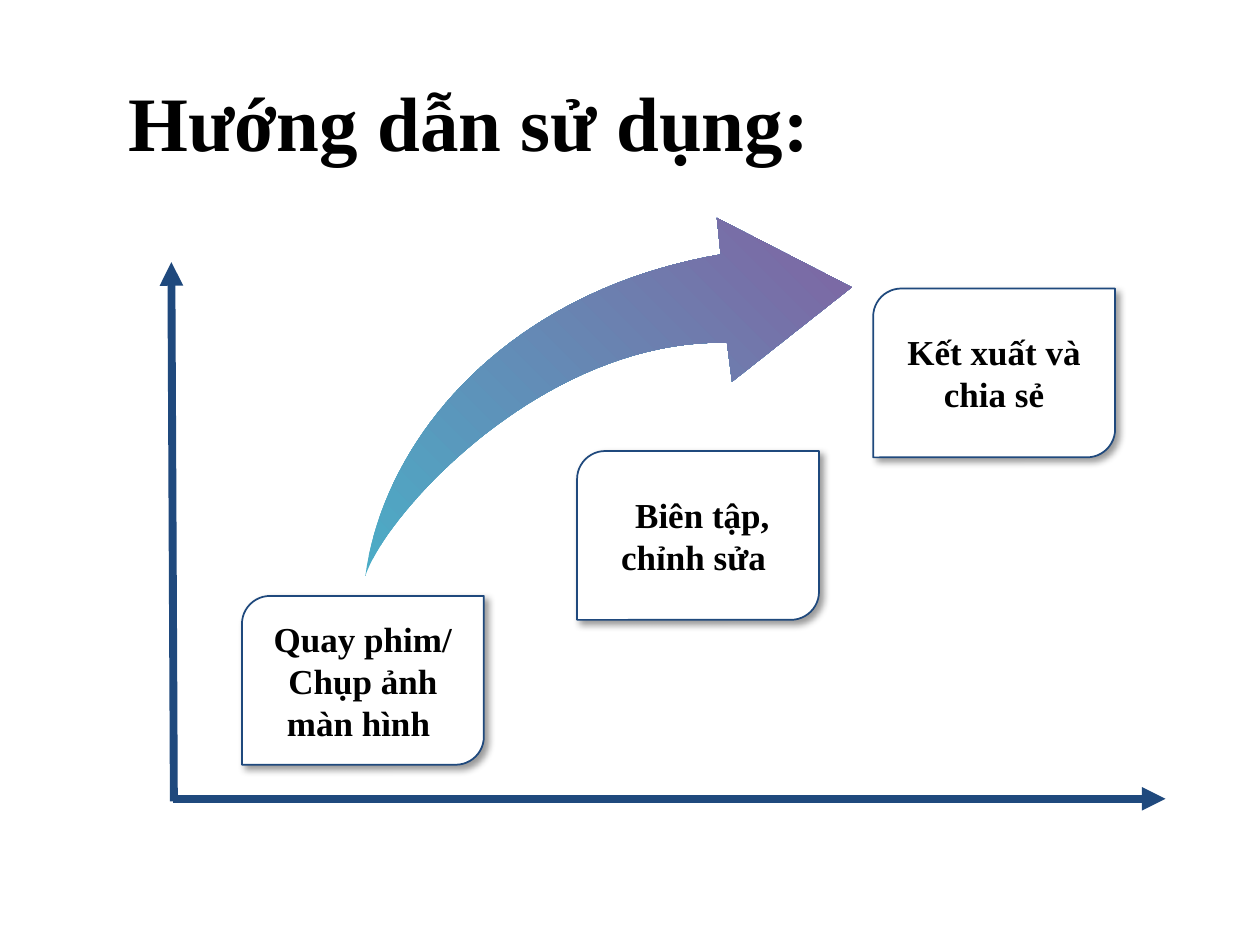
"""Build the usage guide slide: two axes, a rising arrow and three steps."""
from pptx import Presentation
from pptx.dml.color import RGBColor
from pptx.enum import shapes, text
from pptx.oxml import parse_xml
from pptx.oxml.ns import nsdecls, qn
from pptx.util import Inches, Pt

FONT = "Times New Roman"
NAVY = RGBColor(0x1F, 0x49, 0x7D)
WHITE = RGBColor(0xFF, 0xFF, 0xFF)
BLACK = RGBColor(0x00, 0x00, 0x00)
TEAL = RGBColor(0x4B, 0xAC, 0xC6)
PURPLE = RGBColor(0x80, 0x64, 0xA2)

STEPS = [
    (1.92, 4.73, "Quay phim/ Chụp ảnh màn hình "),
    (4.58, 3.58, " Biên tập, chỉnh sửa "),
    (6.93, 2.29, "Kết xuất và chia sẻ"),
]
STEP_WIDTH, STEP_HEIGHT = 1.92, 1.34
AXES = [((1.37, 6.34), (9.25, 6.34)), ((1.38, 6.36), (1.36, 2.08))]
ARROW_TAIL = (2.9, 4.57)
ARROW_HEAD = [(5.69, 1.73), (6.76, 2.28), (5.81, 3.03), (5.77, 2.72)]
UPPER_EDGE = [ARROW_TAIL, (3.05, 3.47), (4.03, 2.31), (5.72, 2.02)]
LOWER_EDGE = [ARROW_HEAD[-1], (4.32, 2.69), (3.07, 4.06), ARROW_TAIL]


def add_run(paragraph, words, size):
    """Add one bold black run."""
    run = paragraph.add_run()
    run.text = words
    run.font.name = FONT
    run.font.size = Pt(size)
    run.font.bold = True
    run.font.color.rgb = BLACK


def add_title(slide, words):
    """Add the slide title."""
    box = slide.shapes.add_textbox(Inches(0.92), Inches(0.33), Inches(8.83), Inches(1.25))
    frame = box.text_frame
    frame.word_wrap = True
    frame.vertical_anchor = text.MSO_ANCHOR.MIDDLE
    add_run(frame.paragraphs[0], words, 44)


def add_axis(slide, start, end):
    """Add a thick axis with an arrowhead at its end."""
    ends = [Inches(value) for value in (*start, *end)]
    axis = slide.shapes.add_connector(shapes.MSO_CONNECTOR.STRAIGHT, *ends)
    axis.line.color.rgb = NAVY
    axis.line.width = Pt(4.5)
    properties = axis._element.spPr
    line = properties.find(qn("a:ln"))
    line.append(parse_xml(f'<a:tailEnd {nsdecls("a")} type="triangle"/>'))
    properties.append(parse_xml(f'<a:effectLst {nsdecls("a")}/>'))


def add_drop_shadow(shape):
    """Give a shape a soft shadow towards the lower right."""
    shape.shadow.inherit = False
    effects = shape._element.spPr.find(qn("a:effectLst"))
    effects.append(parse_xml(
        f'<a:outerShdw {nsdecls("a")} blurRad="{Pt(4)}" dist="{Pt(3)}" dir="2700000" '
        'algn="tl" rotWithShape="0"><a:srgbClr val="000000"><a:alpha val="40000"/>'
        '</a:srgbClr></a:outerShdw>'))


def add_step(slide, left, top, words):
    """Add a step card with two rounded corners."""
    card = slide.shapes.add_shape(
        shapes.MSO_SHAPE.ROUND_2_DIAG_RECTANGLE,
        Inches(left), Inches(top), Inches(STEP_WIDTH), Inches(STEP_HEIGHT))
    card.fill.solid()
    card.fill.fore_color.rgb = WHITE
    card.line.color.rgb = NAVY
    card.line.width = Pt(1)
    add_drop_shadow(card)
    frame = card.text_frame
    frame.word_wrap = True
    frame.vertical_anchor = text.MSO_ANCHOR.MIDDLE
    frame.margin_left = frame.margin_right = Inches(0.05)
    frame.margin_top = frame.margin_bottom = Inches(0.05)
    paragraph = frame.paragraphs[0]
    paragraph.alignment = text.PP_ALIGN.CENTER
    add_run(paragraph, words, 20)


def curve_points(controls, count=40):
    """Return points along a cubic Bezier curve, without its start."""
    points = []
    for step in range(1, count + 1):
        t = step / count
        weights = ((1 - t) ** 3, 3 * t * (1 - t) ** 2, 3 * t ** 2 * (1 - t), t ** 3)
        points.append(tuple(
            sum(weight * value for weight, value in zip(weights, values))
            for values in zip(*controls)))
    return points


def add_swoosh(slide):
    """Add the curved arrow with its gradient."""
    outline = [ARROW_TAIL] + curve_points(UPPER_EDGE) + ARROW_HEAD + curve_points(LOWER_EDGE)
    start, *others = [(Inches(x), Inches(y)) for x, y in outline]
    builder = slide.shapes.build_freeform(*start)
    builder.add_line_segments(others, close=True)
    swoosh = builder.convert_to_shape()
    swoosh.shadow.inherit = False
    swoosh.line.fill.background()
    swoosh.fill.gradient()
    swoosh.fill.gradient_angle = 45
    for stop, color, position in zip(swoosh.fill.gradient_stops, (TEAL, PURPLE), (0, 1)):
        stop.color.rgb = color
        stop.position = position


def main():
    """Build and save the slide."""
    presentation = Presentation()
    presentation.slide_width = Inches(10)
    presentation.slide_height = Inches(7.5)
    slide = presentation.slides.add_slide(presentation.slide_layouts[6])
    for start, end in AXES:
        add_axis(slide, start, end)
    add_title(slide, "Hướng dẫn sử dụng:")
    for left, top, words in STEPS:
        add_step(slide, left, top, words)
    add_swoosh(slide)
    presentation.save("out.pptx")


if __name__ == "__main__":
    main()
